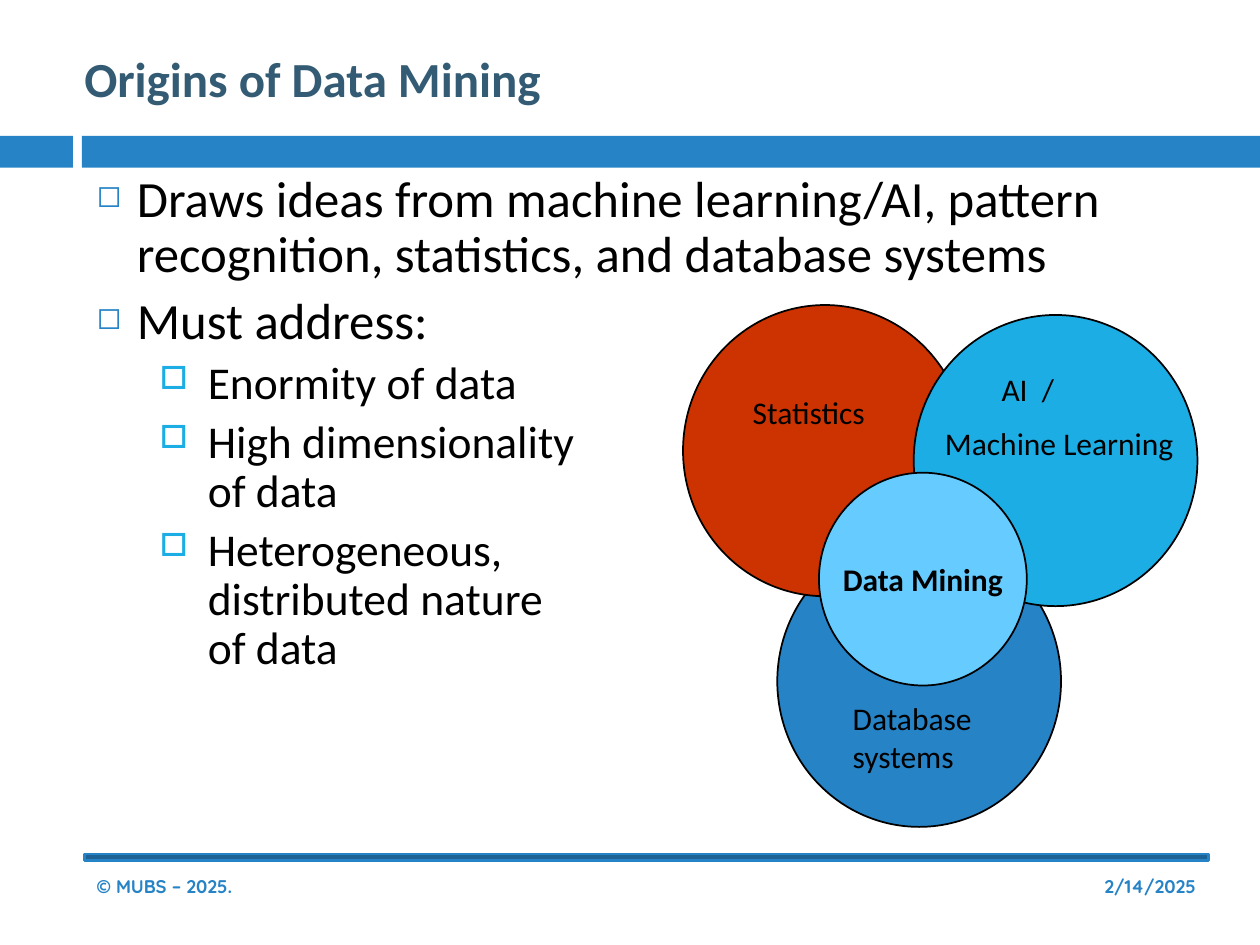
"""Build the slide on the origins of data mining."""
from lxml import etree
from pptx import Presentation
from pptx.dml.color import RGBColor
from pptx.enum.shapes import MSO_SHAPE
from pptx.enum.text import MSO_ANCHOR, PP_ALIGN
from pptx.oxml.ns import qn
from pptx.util import Cm, Pt

RECT, OVAL = MSO_SHAPE.RECTANGLE, MSO_SHAPE.OVAL
TOP, MID = MSO_ANCHOR.TOP, MSO_ANCHOR.MIDDLE
LEFT, CENTER, RIGHT = PP_ALIGN.LEFT, PP_ALIGN.CENTER, PP_ALIGN.RIGHT
HUES = {
    "blue": "2683C6", "navy": "1D6294", "slate": "335B74", "black": "000000",
    "red": "CC3300", "cyan": "1CADE4", "sky": "66CCFF",
}
RGB = {name: RGBColor.from_string(code) for name, code in HUES.items()}

deck = Presentation()
deck.slide_width, deck.slide_height = Cm(25.4), Cm(19.05)
slide = deck.slides.add_slide(deck.slide_layouts[6])
shapes = slide.shapes


def draw(kind, box, fill, line=None, width=1):
    shape = shapes.add_shape(kind, *map(Cm, box))
    shape.shadow.inherit = False
    shape.fill.solid()
    shape.fill.fore_color.rgb = RGB[fill]
    if line:
        shape.line.color.rgb = RGB[line]
        shape.line.width = Pt(width)
    else:
        shape.line.fill.background()
    return shape


def write(para, text, size, hue="black", bold=False, font="Calibri"):
    for i, part in enumerate(text.split("\n")):
        if i:
            para.add_line_break()
        run = para.add_run()
        run.text = part
        run.font.name, run.font.size, run.font.bold = font, Pt(size), bold
        run.font.color.rgb = RGB[hue]


for x, w in [(0, 1.47), (1.65, 23.75)]:
    draw(RECT, (x, 2.74, w, 0.64), "blue")
draw(RECT, (1.7, 17.22, 22.66, 0.13), "navy", "blue", 1.5)

for box, fill in [
    ((15.67, 10.8, 5.72, 5.87), "blue"),
    ((13.77, 6.15, 5.72, 5.87), "red"),
    ((18.42, 6.35, 5.72, 5.87), "cyan"),
]:
    draw(OVAL, box, fill, "black")

core = draw(OVAL, (16.51, 9.53, 4.19, 4.29), "sky", "black").text_frame
core.word_wrap = False
core.vertical_anchor = MID
core.paragraphs[0].alignment = CENTER
write(core.paragraphs[0], "Data Mining", 18, bold=True)

foot = (10.5, "blue", True, "Quicksand")
label = (18,)
for box, text, look, side, anchor, pad in [
    ((1.7, 0.43, 18.72, 2.29), "Origins of Data Mining", (28, "slate", True), LEFT, MID, 0),
    ((1.7, 17.35, 15.24, 1.02), "© MUBS – 2025.", foot, LEFT, MID, 0.25),
    ((18.85, 17.35, 5.51, 1.02), "2/14/2025", foot, RIGHT, MID, 0.25),
    ((14.4, 7.8, 3.81, 1.02), "Statistics", label, CENTER, TOP, 0.25),
    ((16.94, 13.97, 4.01, 1.78), "Database systems", label, LEFT, TOP, 0.25),
]:
    frame = shapes.add_textbox(*map(Cm, box)).text_frame
    frame.word_wrap = True
    frame.vertical_anchor = anchor
    frame.margin_left = frame.margin_right = Cm(pad)
    frame.paragraphs[0].alignment = side
    write(frame.paragraphs[0], text, *look)

learn = shapes.add_textbox(Cm(19.05), Cm(7.34), Cm(5.92), Cm(2.16)).text_frame
learn.word_wrap = True
learn.margin_left = learn.margin_right = 0
first = learn.paragraphs[0]
first._p.get_or_add_pPr().set("marL", str(Cm(1.14)))
write(first, "AI  /", 18)
last = learn.add_paragraph()
last.space_before = Pt(9)
write(last, "Machine Learning", 18)

body = shapes.add_textbox(Cm(1.7), Cm(3.38), Cm(22.66), Cm(13.54)).text_frame
body.word_wrap = True
levels = [
    (29, 7, 0.81, 0.81, "◻", "blue", 60),
    (26, 5.5, 2.24, 0.97, "□", "cyan", 70),
]
points = [
    (0, "Draws ideas from machine learning/AI, pattern recognition, statistics, and database systems"),
    (0, "Must address:"),
    (1, "Enormity of data"),
    (1, "High dimensionality \nof data"),
    (1, "Heterogeneous, \ndistributed nature \nof data"),
]
for i, (level, text) in enumerate(points):
    size, gap, left, hang, mark, hue, scale = levels[level]
    para = body.add_paragraph() if i else body.paragraphs[0]
    para.level = level
    para.line_spacing = 0.9
    if i:
        para.space_before = Pt(gap)
    props = para._p.get_or_add_pPr()
    props.set("marL", str(Cm(left)))
    props.set("indent", str(-Cm(hang)))
    tint = etree.SubElement(props, qn("a:buClr"))
    etree.SubElement(tint, qn("a:srgbClr"), val=HUES[hue])
    etree.SubElement(props, qn("a:buSzPct"), val=str(scale * 1000))
    etree.SubElement(props, qn("a:buChar"), char=mark)
    write(para, text, size)

deck.save("out.pptx")
